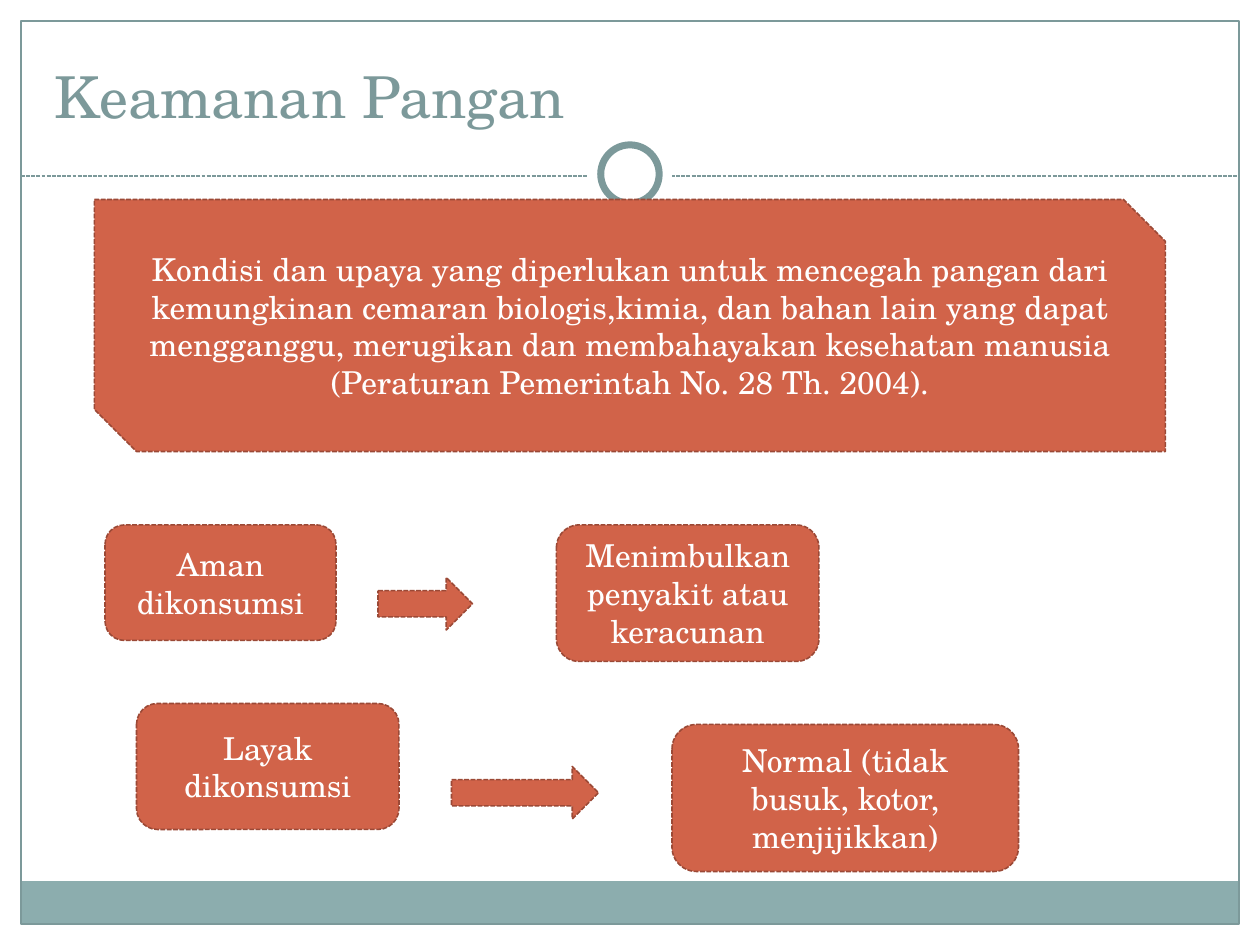
from dataclasses import dataclass

from lxml import etree
from pptx import Presentation
from pptx.dml.color import RGBColor
from pptx.enum import dml, shapes, text
from pptx.oxml.ns import qn
from pptx.util import Pt


@dataclass(frozen=True)
class Theme:
    font: str = "TeX Gyre Schola"
    white: str = "FFFFFF"
    teal: str = "7C999A"
    band: str = "8CADAE"
    rust: str = "D16349"
    rust_dark: str = "9B4936"
    title: int = 33
    body: int = 18


theme = Theme()
DASH = dml.MSO_LINE.SQUARE_DOT  # sysDash
KIND = shapes.MSO_SHAPE


def add_shape(kind, box, fill=None, line=None, width=0.75, dash=None):
    s = slide.shapes.add_shape(kind, *map(Pt, box))
    s.shadow.inherit = False
    for part, color in ((s.fill, fill), (s.line.fill, line)):
        if color:
            part.solid()
            part.fore_color.rgb = RGBColor.from_string(color)
        else:
            part.background()
    if line:
        s.line.width = Pt(width)
        s.line.dash_style = dash
    return s


def write(s, lines, size, color, align, anchor):
    tf = s.text_frame
    tf.word_wrap = True
    tf.vertical_anchor = anchor
    for i, line in enumerate(lines):
        p = tf.paragraphs[0] if i == 0 else tf.add_paragraph()
        p.alignment = align
        r = p.add_run()
        r.text = line
        for name, value in {"name": theme.font, "size": Pt(size)}.items():
            setattr(r.font, name, value)
        r.font.color.rgb = RGBColor.from_string(color)


prs = Presentation()
prs.slide_width, prs.slide_height = Pt(720), Pt(540)
slide = prs.slides.add_slide(prs.slide_layouts[6])

# Frame, footer band and divider with its ring
add_shape(KIND.RECTANGLE, (12, 503.5, 695.5, 24.5), theme.band)
add_shape(KIND.RECTANGLE, (12, 12, 696, 516), line=theme.teal)

divider = slide.shapes.add_connector(
    shapes.MSO_CONNECTOR.STRAIGHT, Pt(12), Pt(100.6), Pt(708), Pt(100.6))
divider.line.color.rgb = RGBColor.from_string(theme.teal)
divider.line.width = Pt(0.75)
divider.line.dash_style = DASH
etree.SubElement(divider._element.spPr, qn("a:effectLst"))

add_shape(KIND.OVAL, (336, 75.5, 48, 48), theme.white)
add_shape(KIND.OVAL, (343.3, 82.8, 33.4, 33.4), theme.white, theme.teal, 4)

title = slide.shapes.add_textbox(Pt(24), Pt(18), Pt(672), Pt(60))
write(title, ["Keamanan Pangan"], theme.title, theme.teal,
      text.PP_ALIGN.LEFT, text.MSO_ANCHOR.BOTTOM)

# Definition, then each criterion with an arrow to its meaning
panels = [
    (KIND.SNIP_2_DIAG_RECTANGLE, (54, 114, 612, 144), [
        "Kondisi dan upaya yang diperlukan untuk mencegah pangan dari "
        "kemungkinan cemaran biologis,kimia, dan bahan lain yang dapat "
        "mengganggu, merugikan dan membahayakan kesehatan manusia",
        "(Peraturan Pemerintah No. 28 Th. 2004)."]),
    (KIND.ROUNDED_RECTANGLE, (60, 300, 132, 66), ["Aman dikonsumsi"]),
    (KIND.RIGHT_ARROW, (216, 330, 54, 30), []),
    (KIND.ROUNDED_RECTANGLE, (318, 300, 150, 78),
     ["Menimbulkan penyakit atau keracunan"]),
    (KIND.ROUNDED_RECTANGLE, (78, 402, 150, 72), ["Layak dikonsumsi"]),
    (KIND.RIGHT_ARROW, (258, 438, 84, 30), []),
    (KIND.ROUNDED_RECTANGLE, (384, 414, 198, 84),
     ["Normal (tidak busuk, kotor, menjijikkan)"]),
]
for kind, box, lines in panels:
    s = add_shape(kind, box, theme.rust, theme.rust_dark, 0.9, DASH)
    write(s, lines, theme.body, theme.white,
          text.PP_ALIGN.CENTER, text.MSO_ANCHOR.MIDDLE)

prs.save("out.pptx")
